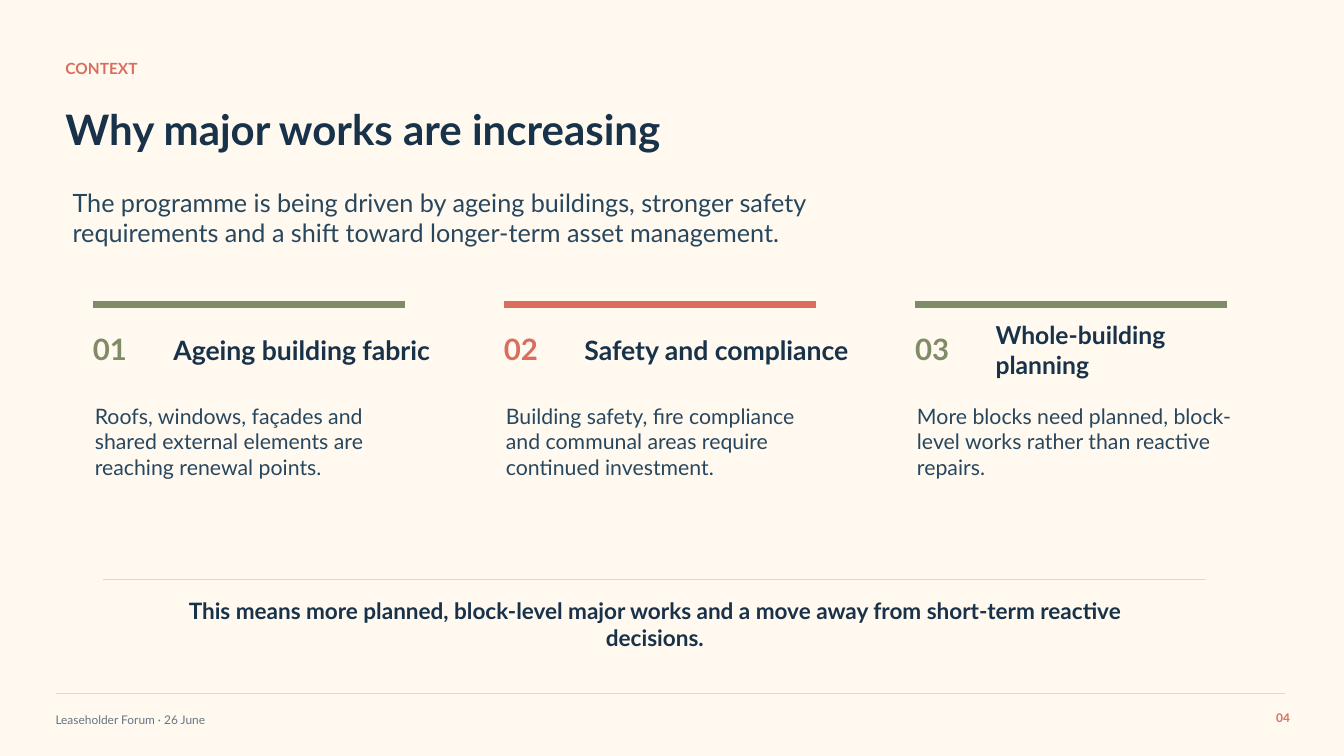
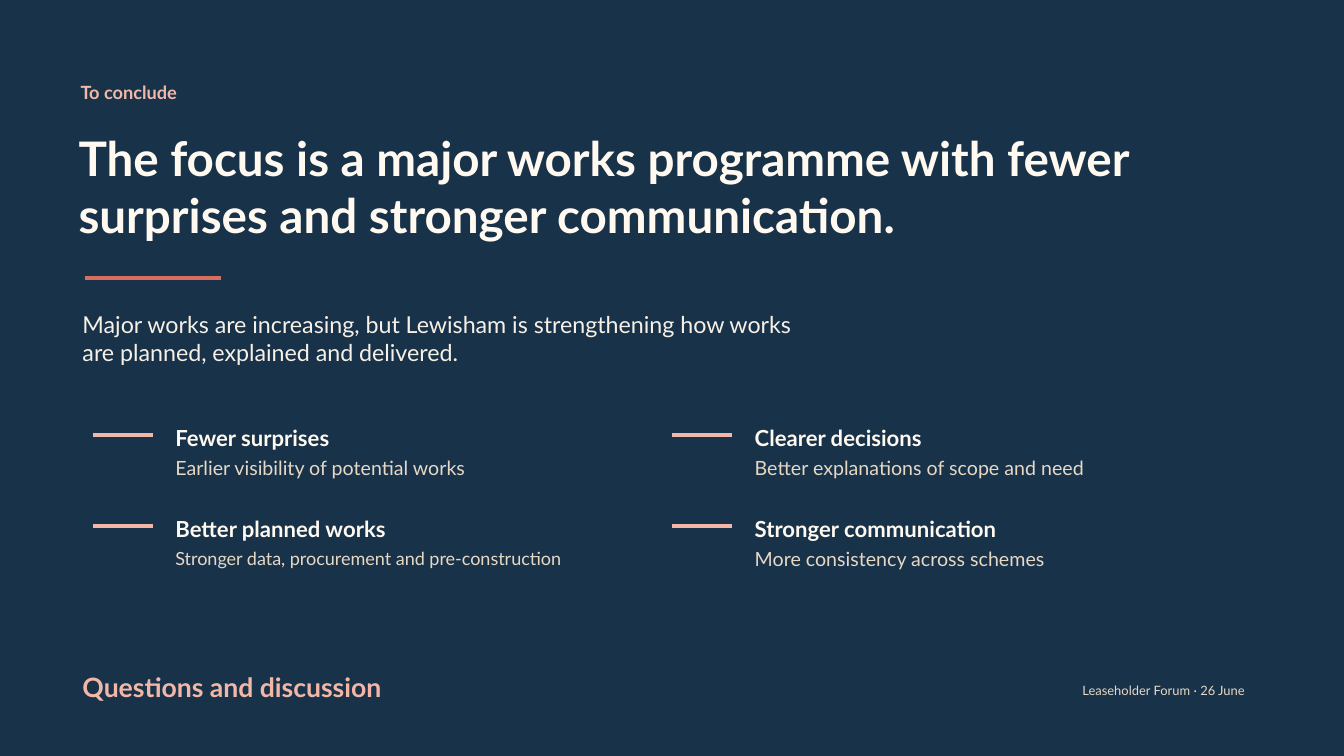
from lxml import etree
from pptx import Presentation
from pptx import util as u
from pptx.dml.color import RGBColor
from pptx.enum import shapes, text
from pptx.oxml.ns import qn

CREAM = RGBColor(0xFF, 0xF9, 0xF0)
IVORY = RGBColor(0xF7, 0xF0, 0xE6)
SAND = RGBColor(0xE7, 0xD8, 0xC4)
NAVY = RGBColor(0x18, 0x32, 0x4A)
SLATE = RGBColor(0x27, 0x47, 0x5E)
GREY = RGBColor(0x65, 0x75, 0x84)
CORAL = RGBColor(0xD9, 0x6E, 0x5E)
PEACH = RGBColor(0xF3, 0xB7, 0xA8)
OLIVE = RGBColor(0x80, 0x8B, 0x67)

FONT = "Lato"
EVENT = "Leaseholder Forum · 26 June"
TOP, MIDDLE = text.MSO_ANCHOR.TOP, text.MSO_ANCHOR.MIDDLE
LEFT, CENTER, RIGHT = text.PP_ALIGN.LEFT, text.PP_ALIGN.CENTER, text.PP_ALIGN.RIGHT

GRID_LEFT = 2.34

DRIVERS = [
    ("Ageing building fabric", 19, OLIVE,
     "Roofs, windows, façades and shared external elements are reaching renewal points."),
    ("Safety and compliance", 19, CORAL,
     "Building safety, fire compliance and communal areas require continued investment."),
    ("Whole-building planning", 17.6, OLIVE,
     "More blocks need planned, block-level works rather than reactive repairs."),
]
OUTCOMES = [
    ("Fewer surprises", "Earlier visibility of potential works", 14),
    ("Clearer decisions", "Better explanations of scope and need", 14),
    ("Better planned works", "Stronger data, procurement and pre-construction", 12.9),
    ("Stronger communication", "More consistency across schemes", 14),
]


def add_slide(deck, background):
    slide = deck.slides.add_slide(deck.slide_layouts[6])
    slide.background.fill.solid()
    slide.background.fill.fore_color.rgb = background
    return slide


def add_text(slide, box, words, size, color, bold=False, anchor=MIDDLE, align=LEFT):
    frame = slide.shapes.add_textbox(*map(u.Cm, box)).text_frame
    frame.word_wrap = True
    frame.vertical_anchor = anchor
    frame.margin_left = frame.margin_top = frame.margin_right = frame.margin_bottom = 0
    paragraph = frame.paragraphs[0]
    paragraph.alignment = align
    run = paragraph.add_run()
    run.text = words
    run.font.name = FONT
    run.font.size = u.Pt(size)
    run.font.bold = bold
    run.font.color.rgb = color


def add_rule(slide, left, top, length, color, weight):
    rule = slide.shapes.add_connector(
        shapes.MSO_CONNECTOR.STRAIGHT,
        u.Cm(left), u.Cm(top), u.Cm(left + length), u.Cm(top))
    rule.line.color.rgb = color
    rule.line.width = u.Pt(weight)
    etree.SubElement(rule._element.spPr, qn("a:effectLst"))


def add_heading(slide, label_box, label, label_size, label_color,
                title_box, title, title_size, title_color, title_anchor):
    add_text(slide, label_box, label, label_size, label_color, bold=True)
    add_text(slide, title_box, title, title_size, title_color, bold=True, anchor=title_anchor)


def add_driver(slide, index, heading, heading_size, accent, detail):
    left = GRID_LEFT + index * 10.36
    add_rule(slide, left, 7.67, 7.87, accent, 5)
    add_text(slide, (left, 8.33, 1.78, 0.91), f"{index + 1:02}", 21, accent, bold=True)
    add_text(slide, (left + 2.03, 8.26, 6.73, 1.09), heading, heading_size, NAVY, bold=True)
    add_text(slide, (left + 0.05, 10.16, 8.08, 2.49), detail, 15.2, SLATE, anchor=TOP)


def add_outcome(slide, index, heading, detail, detail_size):
    row, column = divmod(index, 2)
    left = GRID_LEFT + column * 14.6
    top = 10.67 + row * 2.29
    add_rule(slide, left, top + 0.3, 1.52, PEACH, 3)
    add_text(slide, (left + 2.08, top, 6.73, 0.71), heading, 15.8, CREAM, bold=True)
    add_text(slide, (left + 2.08, top + 0.76, 10.29, 0.71), detail, detail_size, SAND)


def build_context(deck):
    slide = add_slide(deck, CREAM)
    add_heading(slide, (1.65, 1.4, 13.97, 0.64), "CONTEXT", 11, CORAL,
                (1.65, 2.31, 22.35, 1.88), "Why major works are increasing", 30, NAVY, MIDDLE)
    add_text(slide, (1.83, 4.72, 18.8, 1.57),
             "The programme is being driven by ageing buildings, stronger safety "
             "requirements and a shift toward longer-term asset management.",
             18, SLATE, anchor=TOP)
    for index, driver in enumerate(DRIVERS):
        add_driver(slide, index, *driver)
    add_rule(slide, 2.59, 14.6, 27.81, SAND, 1.2)
    add_text(slide, (3.68, 15.24, 25.65, 0.97),
             "This means more planned, block-level major works and a move away "
             "from short-term reactive decisions.",
             16.1, NAVY, bold=True, align=CENTER)
    add_text(slide, (1.4, 17.91, 12.19, 0.46), EVENT, 8.5, GREY)
    add_text(slide, (31.37, 17.86, 1.14, 0.46), "04", 8.5, CORAL, bold=True, align=RIGHT)
    add_rule(slide, 1.4, 17.48, 30.99, SAND, 1)


def build_conclusion(deck):
    slide = add_slide(deck, NAVY)
    add_heading(slide, (2.03, 1.88, 9.14, 0.89), "To conclude", 13, PEACH,
                (1.98, 3.25, 27.69, 2.92),
                "The focus is a major works programme with fewer surprises "
                "and stronger communication.", 34, CREAM, TOP)
    add_rule(slide, 2.13, 7.01, 3.43, CORAL, 3)
    add_text(slide, (2.08, 7.82, 18.42, 1.32),
             "Major works are increasing, but Lewisham is strengthening how works "
             "are planned, explained and delivered.",
             16.6, IVORY, anchor=TOP)
    for index, outcome in enumerate(OUTCOMES):
        add_outcome(slide, index, *outcome)
    add_text(slide, (2.08, 16.94, 12.7, 0.76), "Questions and discussion", 19, PEACH, bold=True)
    add_text(slide, (22.86, 17.15, 8.51, 0.51), EVENT, 9.2, SAND, align=RIGHT)


def main():
    deck = Presentation()
    deck.slide_width = u.Cm(33.87)
    deck.slide_height = u.Cm(19.05)
    build_context(deck)
    build_conclusion(deck)
    deck.save("out.pptx")


if __name__ == "__main__":
    main()
